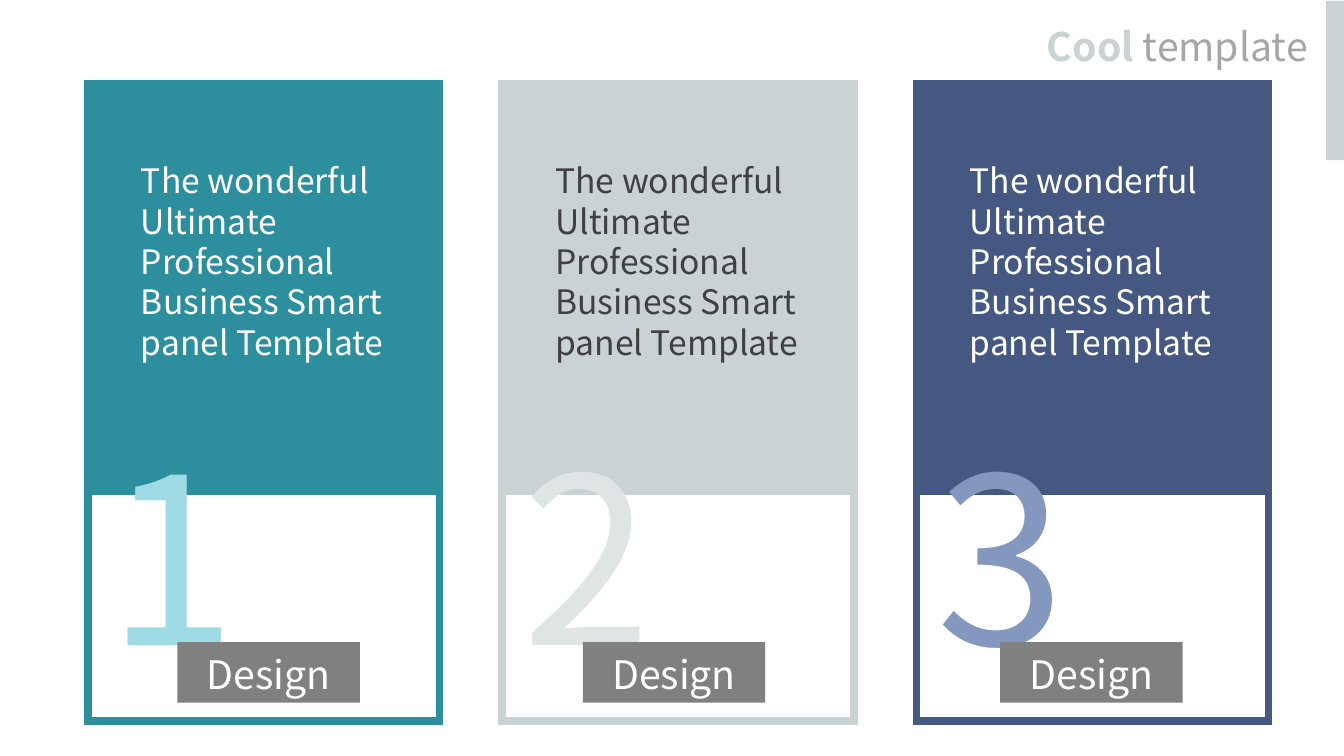
from lxml import etree
from pptx import Presentation
from pptx.dml.color import RGBColor
from pptx.enum.shapes import MSO_SHAPE
from pptx.enum.text import MSO_ANCHOR, MSO_AUTO_SIZE, PP_ALIGN
from pptx.oxml.ns import qn
from pptx.util import Inches, Pt

RECT = MSO_SHAPE.RECTANGLE
TOP = MSO_ANCHOR.TOP
GROW = MSO_AUTO_SIZE.SHAPE_TO_FIT_TEXT
LEFT, CENTER, RIGHT = PP_ALIGN.LEFT, PP_ALIGN.CENTER, PP_ALIGN.RIGHT

TEAL = RGBColor(0x2D, 0x8F, 0x9E)
PALE_TEAL = RGBColor(0x9F, 0xDB, 0xE4)
SILVER = RGBColor(0xC9, 0xD2, 0xD4)
PALE_SILVER = RGBColor(0xDF, 0xE4, 0xE5)
NAVY = RGBColor(0x44, 0x58, 0x81)
PALE_NAVY = RGBColor(0x84, 0x97, 0xBE)
WHITE = RGBColor(0xFF, 0xFF, 0xFF)
DARK = RGBColor(0x40, 0x40, 0x40)
GRAY = RGBColor(0x80, 0x80, 0x80)
LIGHT_GRAY = RGBColor(0xA6, 0xA6, 0xA6)

FONT = "Noto Sans CJK JP"
BODY = "The wonderful Ultimate Professional Business Smart panel Template"

# Column grid: left edge, pitch and width of the three cards
COL_LEFT, COL_PITCH, COL_W = 0.87, 4.11, 3.49

# card colour, number colour, body colour, left of the label
CARDS = [
    (TEAL, PALE_TEAL, WHITE, 1.76),
    (SILVER, PALE_SILVER, DARK, 5.78),
    (NAVY, PALE_NAVY, WHITE, 9.92),
]


def add_rect(x, y, w, h, fill, border=None):
    """Add a plain rectangle, with a thick square-cornered border if given."""
    sp = s.shapes.add_shape(RECT, Inches(x), Inches(y), Inches(w), Inches(h))
    sp.shadow.inherit = False
    sp.fill.solid()
    sp.fill.fore_color.rgb = fill
    if border is None:
        sp.line.fill.background()
    else:
        sp.line.color.rgb = border
        sp.line.width = Pt(5.5)
        ln = sp.element.spPr.find(qn("a:ln"))
        etree.SubElement(ln, qn("a:miter")).set("lim", "800000")
    return sp


def write(sp, runs, size, align=LEFT, wrap=True, top_inset=0.05):
    """Fill a shape with one paragraph of (text, colour, bold) runs."""
    tf = sp.text_frame
    frame = {"word_wrap": wrap, "auto_size": GROW, "vertical_anchor": TOP,
             "margin_top": Inches(top_inset), "margin_bottom": Inches(0.05)}
    for name, value in frame.items():
        setattr(tf, name, value)
    p = tf.paragraphs[0]
    p.alignment = align
    for text, color, bold in runs:
        r = p.add_run()
        r.text = text
        for name, value in {"name": FONT, "size": Pt(size), "bold": bold}.items():
            setattr(r.font, name, value)
        r.font.color.rgb = color


prs = Presentation()
prs.slide_width, prs.slide_height = Inches(13.33), Inches(7.5)
s = prs.slides.add_slide(prs.slide_layouts[5])

title = s.shapes.title
title.left, title.top = Inches(10.14), Inches(0.17)
title.width, title.height = Inches(2.93), Inches(0.57)
write(title, [("Cool ", SILVER, True), ("template", LIGHT_GRAY, False)],
      28, RIGHT, wrap=False)
add_rect(13.15, 0.01, 0.18, 1.58, SILVER)

for i, (color, number_color, body_color, label_x) in enumerate(CARDS):
    x = COL_LEFT + i * COL_PITCH
    add_rect(x, 0.83, COL_W, 4.02, color, color)
    add_rect(x, 4.87, COL_W, 2.28, WHITE, color)

    number = s.shapes.add_textbox(Inches(x + 0.1), Inches(4.05), Inches(1.65), Inches(2.89))
    write(number, [(str(i + 1), number_color, False)], 166, wrap=False)

    label = add_rect(label_x, 6.37, 1.81, 0.6, GRAY)
    write(label, [("Design", WHITE, False)], 28, CENTER, top_inset=0.08)

    body = s.shapes.add_textbox(Inches(x + 0.43), Inches(1.54), Inches(2.64), Inches(2.52))
    write(body, [(BODY, body_color, False)], 24)

prs.save("out.pptx")
